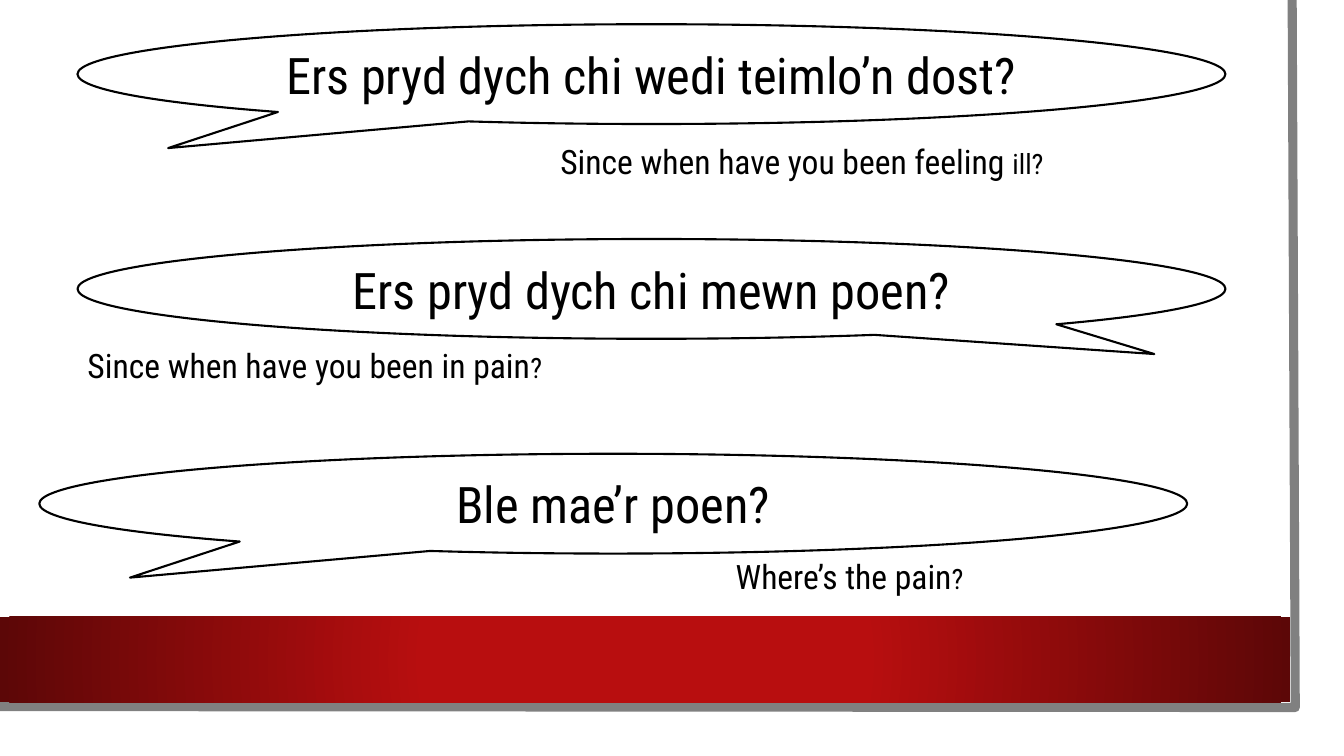
from lxml import etree
from pptx import Presentation
from pptx.dml.color import RGBColor
from pptx.enum.shapes import MSO_SHAPE
from pptx.enum.text import MSO_ANCHOR, PP_ALIGN
from pptx.oxml.ns import qn
from pptx.util import Pt

BUBBLE = MSO_SHAPE.OVAL_CALLOUT
RECTANGLE = MSO_SHAPE.RECTANGLE
MIDDLE, TOP = MSO_ANCHOR.MIDDLE, MSO_ANCHOR.TOP
CENTER, LEFT = PP_ALIGN.CENTER, PP_ALIGN.LEFT

BLACK = RGBColor(0x00, 0x00, 0x00)
WHITE = RGBColor(0xFF, 0xFF, 0xFF)
GREY = RGBColor(0x80, 0x80, 0x80)
RED = RGBColor(0xB8, 0x0E, 0x0F)
DARK_RED = RGBColor(0x5C, 0x07, 0x07)

FONT = "Roboto Condensed"
QUESTION_SIZE, ENGLISH_SIZE, ENDING_SIZE = 36, 24, 20
BUBBLE_WIDTH, BUBBLE_HEIGHT = 820, 71.3
FIRST_TOP, BUBBLE_PITCH = 17.3, 153.4
TAIL_LEFT, TAIL_RIGHT = (-0.421, 0.741), (0.438, 0.653)


def write(frame, runs, align=LEFT, anchor=TOP, color=BLACK):
    """Fill a text frame with one paragraph of (text, size) runs."""
    frame.word_wrap = True
    frame.vertical_anchor = anchor
    paragraph = frame.paragraphs[0]
    paragraph.alignment = align
    for text, size in runs:
        run = paragraph.add_run()
        run.text = text
        run.font.name = FONT
        run.font.size = Pt(size)
        run.font.color.rgb = color


class QuestionSlide:
    def __init__(self, slide):
        self.shapes = slide.shapes

    def edge(self, points, color, width):
        corners = [(Pt(x), Pt(y)) for x, y in points]
        builder = self.shapes.build_freeform(*corners[0])
        builder.add_line_segments(corners[1:], close=False)
        border = builder.convert_to_shape()
        border.shadow.inherit = False
        border.fill.background()
        border.line.color.rgb = color
        border.line.width = Pt(width)

    def band(self, left, top, width, height, stops):
        band = self.shapes.add_shape(RECTANGLE, Pt(left), Pt(top), Pt(width), Pt(height))
        band.shadow.inherit = False
        band.line.fill.background()
        band.fill.gradient()
        for stop, (position, color) in zip(band.fill.gradient_stops, stops):
            stop.position = position
            stop.color.rgb = color
        # Turn the linear gradient into a radial one
        gradient = band.element.spPr.find(qn("a:gradFill"))
        gradient.remove(gradient.find(qn("a:lin")))
        radial = etree.SubElement(gradient, qn("a:path"), {"path": "circle"})
        etree.SubElement(radial, qn("a:fillToRect"), dict.fromkeys("ltrb", "50000"))

    def bubble(self, left, top, question, tail):
        bubble = self.shapes.add_shape(BUBBLE, Pt(left), Pt(top),
                                       Pt(BUBBLE_WIDTH), Pt(BUBBLE_HEIGHT))
        bubble.shadow.inherit = False
        bubble.adjustments[0], bubble.adjustments[1] = tail
        bubble.fill.solid()
        bubble.fill.fore_color.rgb = WHITE
        bubble.line.color.rgb = BLACK
        bubble.line.width = Pt(1.5)
        write(bubble.text_frame, [(question, QUESTION_SIZE)], align=CENTER, anchor=MIDDLE)

    def translation(self, left, top, english, ending):
        box = self.shapes.add_textbox(Pt(left), Pt(top), Pt(400), Pt(36))
        write(box.text_frame, [(english, ENGLISH_SIZE), (ending, ENDING_SIZE)])


def main():
    presentation = Presentation()
    presentation.slide_width, presentation.slide_height = Pt(960), Pt(540)
    page = QuestionSlide(presentation.slides.add_slide(presentation.slide_layouts[6]))

    # Page edge and red band
    page.edge([(923, 0), (925.2, 505.4), (-2.2, 504.7)], GREY, 6.5)
    page.band(0, 440.6, 921.6, 61.2, [(0.34, RED), (1, DARK_RED)])

    # Welsh questions, evenly spaced
    questions = [
        (55.4, "Ers pryd dych chi wedi teimlo’n dost?", TAIL_LEFT),
        (55.4, "Ers pryd dych chi mewn poen?", TAIL_RIGHT),
        (28.1, "Ble mae’r poen?", TAIL_LEFT),
    ]
    for row, (left, question, tail) in enumerate(questions):
        page.bubble(left, FIRST_TOP + row * BUBBLE_PITCH, question, tail)

    # English translations
    page.translation(393.1, 97.2, "Since when have you been feeling ", "ill?")
    page.translation(55.4, 242.6, "Since when have you been in pain", "?")
    page.translation(518.4, 393.8, "Where’s the pain", "?")

    presentation.save("out.pptx")


if __name__ == "__main__":
    main()
